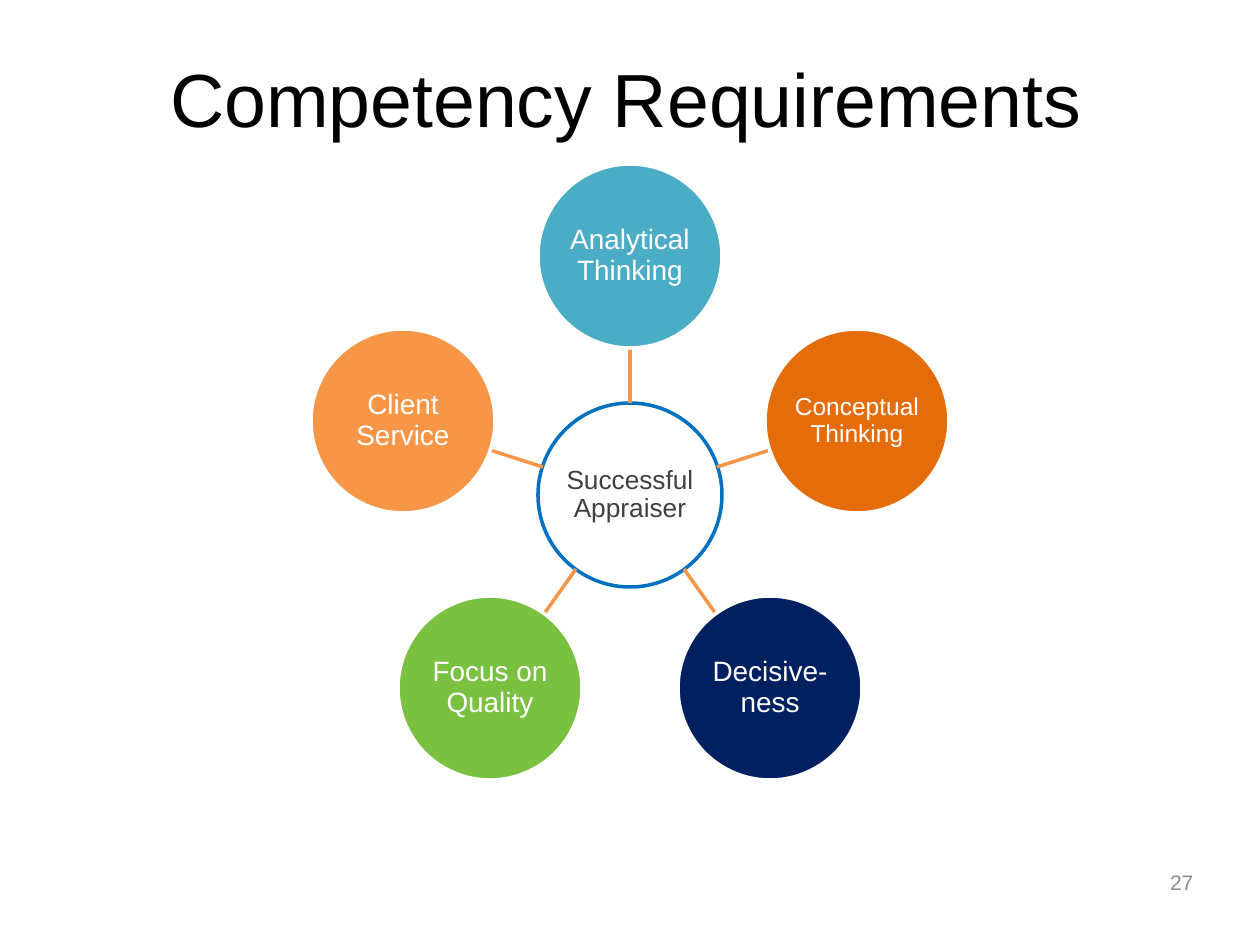
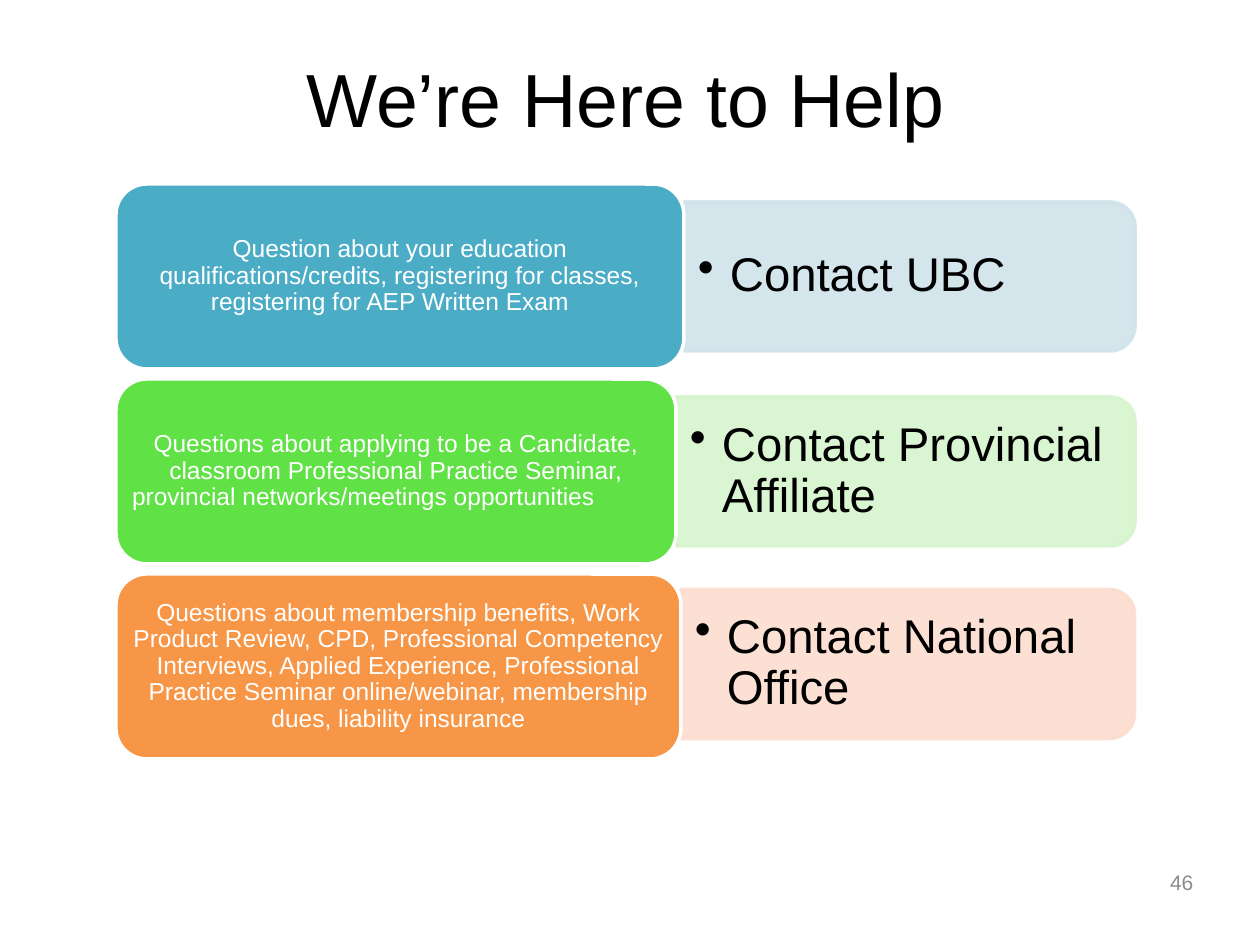
from dataclasses import dataclass
from math import cos, radians, sin
from typing import Any

from lxml import etree
from pptx import Presentation
from pptx import util as u
from pptx.dml import color
from pptx.enum import shapes, text
from pptx.oxml import ns

EMU_PER_PX = 914400 / 126
FONT = "Arial"
BLACK, WHITE, GREY = "000000", "FFFFFF", "8C8C8C"
DARK_GREY, BLUE, ORANGE, TEAL = "404040", "0070C0", "F79646", "4BACC6"
LINE_WIDTH = 2
TITLE_ONLY = 5

HUB_X, HUB_Y = 630, 495
CIRCLE_RADIUS = 92
ORBIT_RADIUS = 239
SPOKE_END = 147

ROW_LEFT, ROW_TOP, ROW_PITCH, ROW_HEIGHT = 116, 184, 195, 185
PANEL_RIGHT, PANEL_HEIGHT = 1135, 149


@dataclass(frozen=True)
class Box:
    left: int
    top: int
    width: int
    height: int


@dataclass(frozen=True)
class Style:
    size: int
    hue: str
    align: Any = text.PP_ALIGN.CENTER
    spacing: float = 0.9
    margins: tuple[int, int] = (1, 1)
    bullet_indent: int = 0


@dataclass(frozen=True)
class Competency:
    label: str
    fill: str
    size: int = 16


@dataclass(frozen=True)
class Enquiry:
    question: str
    contact: str
    fill: str
    panel_fill: str
    width: int
    panel_offset: int = 18


TITLE_BOX = Box(122, 18, 1007, 158)
NUMBER_BOX = Box(1157, 857, 83, 50)
TITLE_STYLE = Style(43, BLACK, spacing=1.0, margins=(13, 6))
NUMBER_STYLE = Style(12, GREY, text.PP_ALIGN.LEFT, 1.0, (13, 6))
QUESTION_STYLE = Style(14, WHITE, margins=(7, 4))
CONTACT_STYLE = Style(27, BLACK, text.PP_ALIGN.LEFT, margins=(14, 7), bullet_indent=32)

COMPETENCIES = [
    Competency("Analytical Thinking", TEAL),
    Competency("Conceptual Thinking", "E46C0A", 14),
    Competency("Decisive-ness", "002060"),
    Competency("Focus on Quality", "7AC142"),
    Competency("Client Service", ORANGE),
]

ENQUIRIES = [
    Enquiry(
        "Question about your education qualifications/credits, registering for "
        "classes, registering for AEP Written Exam\t",
        "Contact UBC", TEAL, "D0E3EA", 568,
    ),
    Enquiry(
        "Questions about applying to be a Candidate, classroom Professional Practice "
        "Seminar, provincial networks/meetings opportunities\t\t",
        "Contact Provincial Affiliate", "60E146", "D6F4CE", 560,
    ),
    Enquiry(
        "Questions about membership benefits, Work Product Review, CPD, Professional "
        "Competency Interviews, Applied Experience, Professional Practice Seminar "
        "online/webinar, membership dues, liability insurance",
        "Contact National Office", ORANGE, "FCDDCF", 565, 15,
    ),
]


def px(length: float) -> u.Emu:
    return u.Emu(round(length * EMU_PER_PX))


def rgb(hue: str) -> color.RGBColor:
    return color.RGBColor.from_string(hue)


def assign(target: Any, values: dict[str, Any]) -> None:
    for attribute, value in values.items():
        setattr(target, attribute, value)


def emu(box: Box) -> tuple[u.Emu, ...]:
    return px(box.left), px(box.top), px(box.width), px(box.height)


def write(holder: Any, words: str, style: Style) -> None:
    frame = holder.text_frame
    side, end = map(px, style.margins)
    assign(frame, {
        "word_wrap": True,
        "auto_size": text.MSO_AUTO_SIZE.NONE,
        "vertical_anchor": text.MSO_ANCHOR.MIDDLE,
        "margin_left": side, "margin_right": side,
        "margin_top": end, "margin_bottom": end,
    })
    paragraph = frame.paragraphs[0]
    if style.bullet_indent:
        properties = paragraph._p.get_or_add_pPr()
        indent = px(style.bullet_indent)
        properties.set("marL", str(indent))
        properties.set("indent", str(-indent))
        etree.SubElement(properties, ns.qn("a:buChar")).set("char", "•")
    assign(paragraph, {"alignment": style.align, "line_spacing": style.spacing})
    run = paragraph.add_run()
    run.text = words
    assign(run.font, {"size": u.Pt(style.size), "name": FONT})
    run.font.color.rgb = rgb(style.hue)


def add_label(slide: Any, box: Box, words: str, style: Style) -> None:
    write(slide.shapes.add_textbox(*emu(box)), words, style)


def add_filled(slide: Any, kind: Any, box: Box, fill: str, outline: str) -> Any:
    shape = slide.shapes.add_shape(kind, *emu(box))
    shape.shadow.inherit = False
    shape.fill.solid()
    shape.fill.fore_color.rgb = rgb(fill)
    shape.line.color.rgb = rgb(outline)
    shape.line.width = u.Pt(LINE_WIDTH)
    return shape


def add_circle(slide: Any, x: int, y: int, words: str, fill: str, outline: str, style: Style) -> None:
    box = Box(x - CIRCLE_RADIUS, y - CIRCLE_RADIUS, 2 * CIRCLE_RADIUS, 2 * CIRCLE_RADIUS)
    write(add_filled(slide, shapes.MSO_SHAPE.OVAL, box, fill, outline), words, style)


def around_hub(radius: int, angle: float) -> tuple[int, int]:
    return (round(HUB_X + radius * sin(radians(angle))),
            round(HUB_Y - radius * cos(radians(angle))))


def add_spoke(slide: Any, angle: float) -> None:
    ends = around_hub(CIRCLE_RADIUS, angle) + around_hub(SPOKE_END, angle)
    spoke = slide.shapes.add_connector(shapes.MSO_CONNECTOR.STRAIGHT, *map(px, ends))
    spoke.line.color.rgb = rgb(ORANGE)
    spoke.line.width = u.Pt(LINE_WIDTH)
    etree.SubElement(spoke._element.spPr, ns.qn("a:effectLst"))


def add_panel(slide: Any, box: Box, fill: str) -> None:
    shift = (box.width - box.height) // 2
    upright = Box(box.left + shift, box.top - shift, box.height, box.width)
    panel = add_filled(slide, shapes.MSO_SHAPE.ROUND_2_SAME_RECTANGLE, upright, fill, fill)
    panel.rotation = 90
    for hue in panel._element.spPr.iter(ns.qn("a:srgbClr")):
        etree.SubElement(hue, ns.qn("a:alpha")).set("val", "90000")


def add_enquiry(slide: Any, enquiry: Enquiry, top: int) -> None:
    panel_left = ROW_LEFT + enquiry.width
    panel = Box(panel_left, top + enquiry.panel_offset, PANEL_RIGHT - panel_left, PANEL_HEIGHT)
    add_panel(slide, panel, enquiry.panel_fill)
    add_label(slide, panel, enquiry.contact, CONTACT_STYLE)
    question_box = Box(ROW_LEFT, top, enquiry.width, ROW_HEIGHT)
    question = add_filled(slide, shapes.MSO_SHAPE.ROUNDED_RECTANGLE, question_box, enquiry.fill, WHITE)
    write(question, enquiry.question, QUESTION_STYLE)


def add_titled_slide(deck: Any, title: str, number: int) -> Any:
    slide = deck.slides.add_slide(deck.slide_layouts[TITLE_ONLY])
    heading = slide.shapes.title
    assign(heading, dict(zip(("left", "top", "width", "height"), emu(TITLE_BOX))))
    write(heading, title, TITLE_STYLE)
    add_label(slide, NUMBER_BOX, str(number), NUMBER_STYLE)
    return slide


def build_competencies(deck: Any) -> None:
    slide = add_titled_slide(deck, "Competency Requirements", 27)
    add_circle(slide, HUB_X, HUB_Y, "Successful Appraiser", WHITE, BLUE, Style(15, DARK_GREY))
    for index, competency in enumerate(COMPETENCIES):
        angle = index * 360 / len(COMPETENCIES)
        add_spoke(slide, angle)
        x, y = around_hub(ORBIT_RADIUS, angle)
        add_circle(slide, x, y, competency.label, competency.fill, WHITE,
                   Style(competency.size, WHITE))


def build_help(deck: Any) -> None:
    slide = add_titled_slide(deck, "We’re Here to Help", 46)
    for index, enquiry in enumerate(ENQUIRIES):
        add_enquiry(slide, enquiry, ROW_TOP + index * ROW_PITCH)


def main() -> None:
    deck = Presentation()
    assign(deck, {"slide_width": px(1260), "slide_height": px(945)})
    build_competencies(deck)
    build_help(deck)
    deck.save("out.pptx")


if __name__ == "__main__":
    main()
